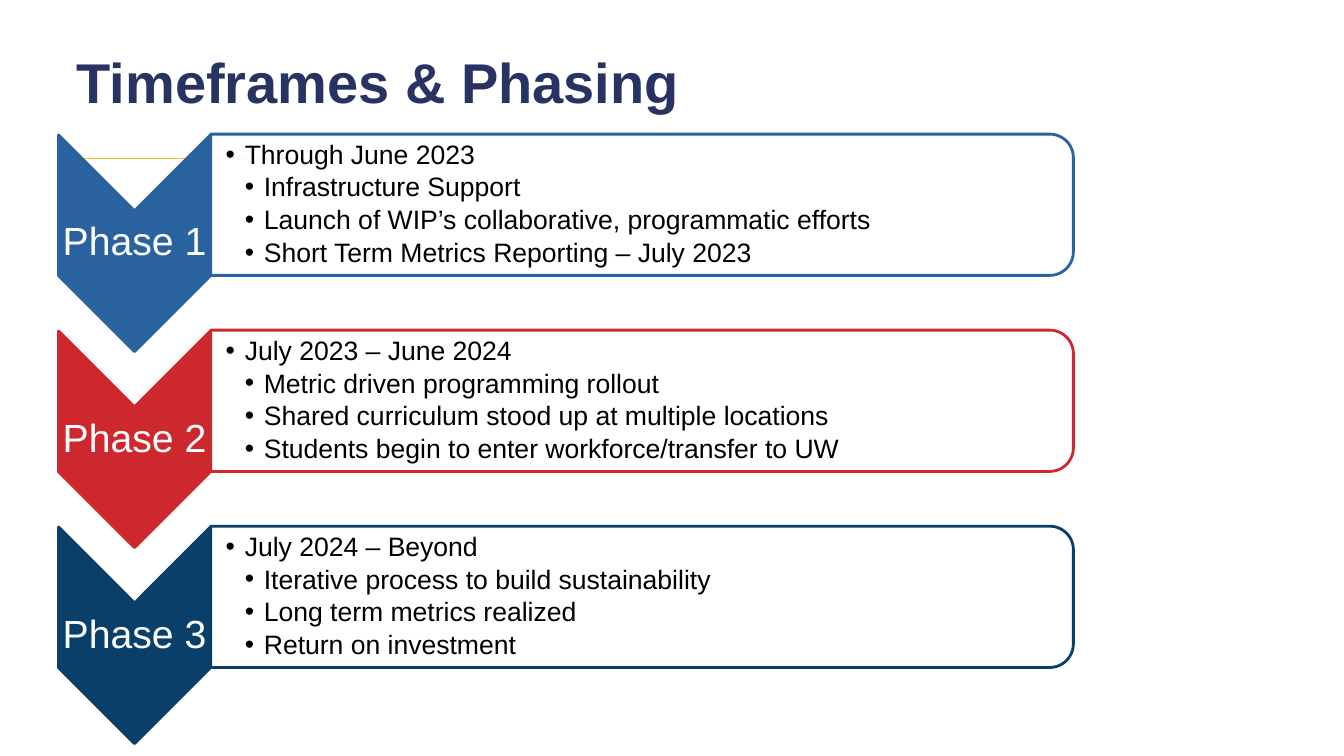
from dataclasses import dataclass

from lxml.etree import SubElement
from pptx import Presentation
from pptx.dml.color import RGBColor as RGB
from pptx.enum.shapes import MSO_CONNECTOR as CONNECTOR, MSO_SHAPE as SHAPE
from pptx.enum.text import MSO_ANCHOR as ANCHOR, PP_ALIGN as ALIGN
from pptx.oxml.ns import qn
from pptx.util import Cm, Pt

# Content
TITLE = "Timeframes & Phasing"
PHASES = [
    ("Phase 1", "29629E", "Through June 2023", [
        "Infrastructure Support",
        "Launch of WIP’s collaborative, programmatic efforts",
        "Short Term Metrics Reporting – July 2023"]),
    ("Phase 2", "CE282F", "July 2023 – June 2024", [
        "Metric driven programming rollout",
        "Shared curriculum stood up at multiple locations",
        "Students begin to enter workforce/transfer to UW"]),
    ("Phase 3", "093F69", "July 2024 – Beyond", [
        "Iterative process to build sustainability",
        "Long term metrics realized",
        "Return on investment"]),
]


@dataclass(frozen=True)
class Theme:
    font: str = "Arial"
    title: str = "283263"
    rule: str = "F7BE24"
    white: str = "FFFFFF"
    text: str = "000000"
    title_size: int = 40
    label_size: int = 28
    text_size: int = 19


THEME = Theme()

# Layout, in centimetres
PITCH = 4.94
CHEVRON_X, CHEVRON_Y, CHEVRON_W, CHEVRON_H = 3.39, 6.13, 3.83, 5.46
PANEL_X, PANEL_Y, PANEL_W, PANEL_H = 16.18, 5.16, 21.74, 3.56
LABEL_H, TEXT_X, TEXT_W, TEXT_H = 1.65, 16.09, 21.56, 3.2
INDENT = 0.48


def centred(x, y, width, height):
    return Cm(x - width / 2), Cm(y - height / 2), Cm(width), Cm(height)


def style(paragraph, size, color, bold=False):
    paragraph.line_spacing = 0.9
    font = paragraph.font
    font.name, font.size, font.bold = THEME.font, Pt(size), bold
    font.color.rgb = RGB.from_string(color)


def add_turned(kind, x, y, width, height, fill, line, adjustments):
    """Add a shape turned a quarter, given its size as seen."""
    shape = slide.shapes.add_shape(kind, *centred(x, y, height, width))
    shape.rotation = 90
    shape.shadow.inherit = False
    for i, value in enumerate(adjustments):
        shape.adjustments[i] = value
    shape.fill.solid()
    shape.fill.fore_color.rgb = RGB.from_string(fill)
    shape.line.color.rgb = RGB.from_string(line)
    shape.line.width = Pt(2)
    return shape


def add_text_frame(x, y, width, height, left, inset):
    frame = slide.shapes.add_textbox(*centred(x, y, width, height)).text_frame
    frame.word_wrap = True
    frame.vertical_anchor = ANCHOR.MIDDLE
    frame.margin_left = Cm(left)
    frame.margin_right = frame.margin_top = frame.margin_bottom = Cm(inset)
    return frame


def add_bullet(paragraph, level):
    paragraph.level = level
    props = paragraph._p.get_or_add_pPr()
    props.set("marL", str(Cm(INDENT * (level + 1))))
    props.set("indent", str(-Cm(INDENT)))
    color = SubElement(props, qn("a:buClr"))
    SubElement(color, qn("a:srgbClr"), val=THEME.text)
    SubElement(props, qn("a:buFont"), typeface=THEME.font)
    SubElement(props, qn("a:buChar"), char="•")


deck = Presentation()
deck.slide_width, deck.slide_height = Cm(33.87), Cm(19.05)
slide = deck.slides.add_slide(deck.slide_layouts[5])

# Title and rule
title = slide.shapes.title
title.left, title.top, title.width, title.height = Cm(1.68), Cm(0.3), Cm(29.82), Cm(3.68)
title.text_frame.text = TITLE
title.text_frame.vertical_anchor = ANCHOR.MIDDLE
heading = title.text_frame.paragraphs[0]
heading.alignment = ALIGN.LEFT
style(heading, THEME.title_size, THEME.title, bold=True)

rule = slide.shapes.add_connector(CONNECTOR.STRAIGHT, Cm(2.06), Cm(3.99), Cm(7.75), Cm(3.99))
rule.line.color.rgb = RGB.from_string(THEME.rule)
rule.line.width = Pt(1)
SubElement(rule._element.spPr, qn("a:effectLst"))

# One chevron and one panel for each phase
for row, (phase, color, period, steps) in enumerate(PHASES):
    chevron_y, panel_y = CHEVRON_Y + row * PITCH, PANEL_Y + row * PITCH

    add_turned(SHAPE.CHEVRON, CHEVRON_X, chevron_y, CHEVRON_W, CHEVRON_H,
               color, color, [0.5])
    label = add_text_frame(CHEVRON_X, chevron_y, CHEVRON_W, LABEL_H, 0.05, 0.05)
    label.text = phase
    label.paragraphs[0].alignment = ALIGN.CENTER
    style(label.paragraphs[0], THEME.label_size, THEME.white)

    panel = add_turned(SHAPE.ROUND_2_SAME_RECTANGLE, PANEL_X, panel_y, PANEL_W, PANEL_H,
                       THEME.white, color, [0.167, 0])
    fill_color = panel._element.spPr.find(qn("a:solidFill"))[0]
    SubElement(fill_color, qn("a:alpha"), val="88000")

    details = add_text_frame(TEXT_X, panel_y, TEXT_W, TEXT_H, 0.38, 0.03)
    details.text = "\n".join([period, *steps])
    for i, line in enumerate(details.paragraphs):
        add_bullet(line, min(i, 1))
        if i:
            line.space_before = Pt(2.9)
        style(line, THEME.text_size, THEME.text)

deck.save("out.pptx")
